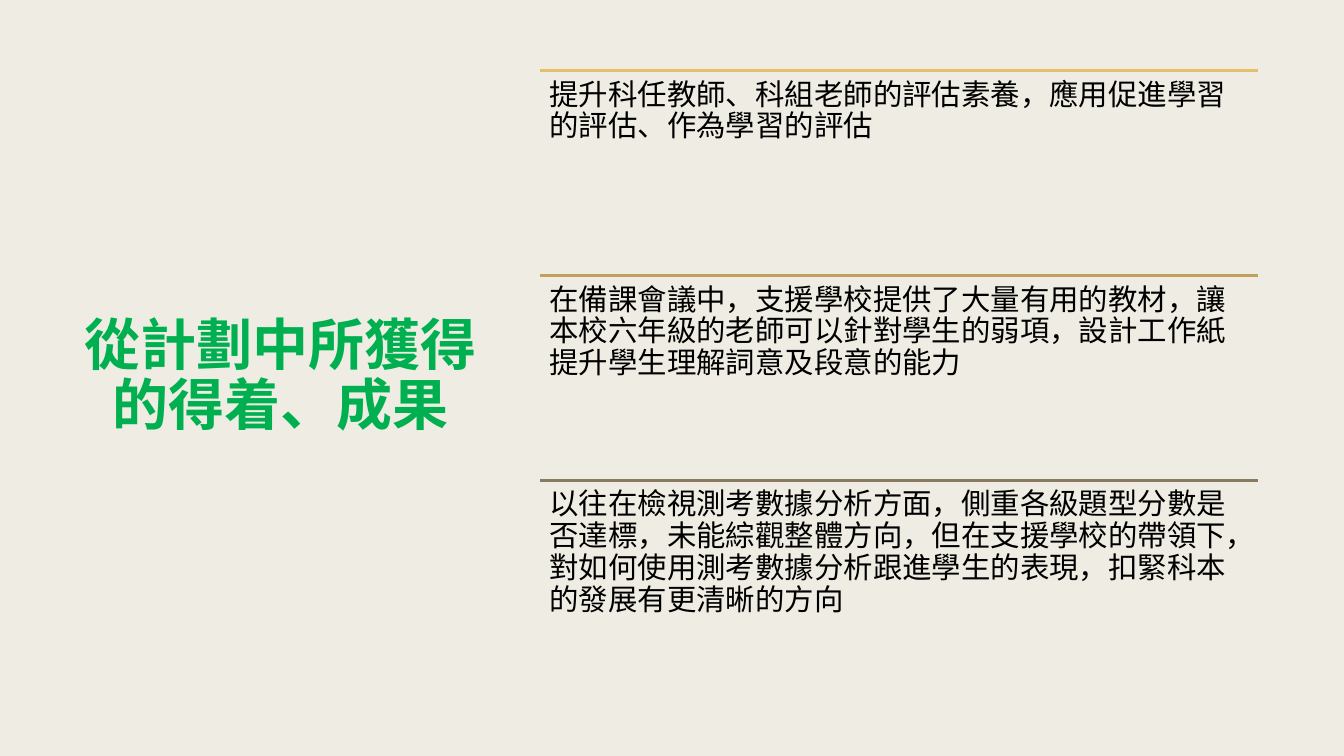
from lxml import etree
from pptx import Presentation
from pptx import util as u
from pptx.dml.color import RGBColor
from pptx.enum import shapes, text
from pptx.oxml.ns import qn

COLORS = {
    "page": "EFEDE3",
    "title": "00B050",
    "body": "000000",
    "gold": "E6C069",
    "ochre": "C0A05C",
    "umber": "897B61",
}
OUTCOMES = [
    ("gold", "提升科任教師、科組老師的評估素養，應用促進學習的評估、作為學習的評估"),
    ("ochre", "在備課會議中，支援學校提供了大量有用的教材，讓本校六年級的老師可以針對學生的弱項，"
              "設計工作紙提升學生理解詞意及段意的能力"),
    ("umber", "以往在檢視測考數據分析方面，側重各級題型分數是否達標，未能綜觀整體方向，"
              "但在支援學校的帶領下，對如何使用測考數據分析跟進學生的表現，扣緊科本的發展有更清晰的方向"),
]
TOP, ROW = 0.7, 6.1 / len(OUTCOMES)
TITLE_LEFT, TITLE_WIDTH = 0.7, 4.17
LIST_LEFT, LIST_WIDTH = 5.36, 7.12


def color(name):
    return RGBColor.from_string(COLORS[name])


def apply(target, values):
    for name, value in values.items():
        setattr(target, name, value)


class OutcomeSlide:
    title_font = {"name": "Arial", "size": u.Pt(40), "bold": True}
    body_font = {"name": "Lato", "size": u.Pt(21), "bold": False}

    def __init__(self, deck):
        self.page = deck.slides.add_slide(deck.slide_layouts[6])
        fill = self.page.background.fill
        fill.solid()
        fill.fore_color.rgb = color("page")

    def row_top(self, row):
        return u.Inches(TOP + row * ROW)

    def label(self, left, width, row, rows, words, ink, font, frame, layout):
        box = self.page.shapes.add_textbox(
            u.Inches(left), self.row_top(row), u.Inches(width), u.Inches(rows * ROW))
        apply(box.text_frame, {"word_wrap": True, **frame})
        para = box.text_frame.paragraphs[0]
        apply(para, layout)
        span = para.add_run()
        span.text = words
        apply(span.font, font)
        span.font.color.rgb = color(ink)

    def title(self, words):
        self.label(TITLE_LEFT, TITLE_WIDTH, 0, len(OUTCOMES), words, "title", self.title_font,
                   {"vertical_anchor": text.MSO_ANCHOR.MIDDLE},
                   {"alignment": text.PP_ALIGN.CENTER, "line_spacing": 0.89})

    def rule(self, row, ink):
        y = self.row_top(row)
        line = self.page.shapes.add_connector(
            shapes.MSO_CONNECTOR.STRAIGHT,
            u.Inches(LIST_LEFT), y, u.Inches(LIST_LEFT + LIST_WIDTH), y)
        line.line.color.rgb = color(ink)
        line.line.width = u.Pt(2.75)
        etree.SubElement(line._element.spPr, qn("a:effectLst"))

    def outcome(self, row, ink, words):
        self.rule(row, ink)
        sides = ("left", "top", "right", "bottom")
        self.label(LIST_LEFT, LIST_WIDTH, row, 1, words, "body", self.body_font,
                   {f"margin_{side}": u.Inches(0.09) for side in sides},
                   {"alignment": text.PP_ALIGN.LEFT, "line_spacing": 0.9})


def main():
    deck = Presentation()
    apply(deck, {"slide_width": u.Inches(13.33), "slide_height": u.Inches(7.5)})
    slide = OutcomeSlide(deck)
    slide.title("從計劃中所獲得的得着、成果")
    for row, (ink, words) in enumerate(OUTCOMES):
        slide.outcome(row, ink, words)
    deck.save("out.pptx")


if __name__ == "__main__":
    main()
